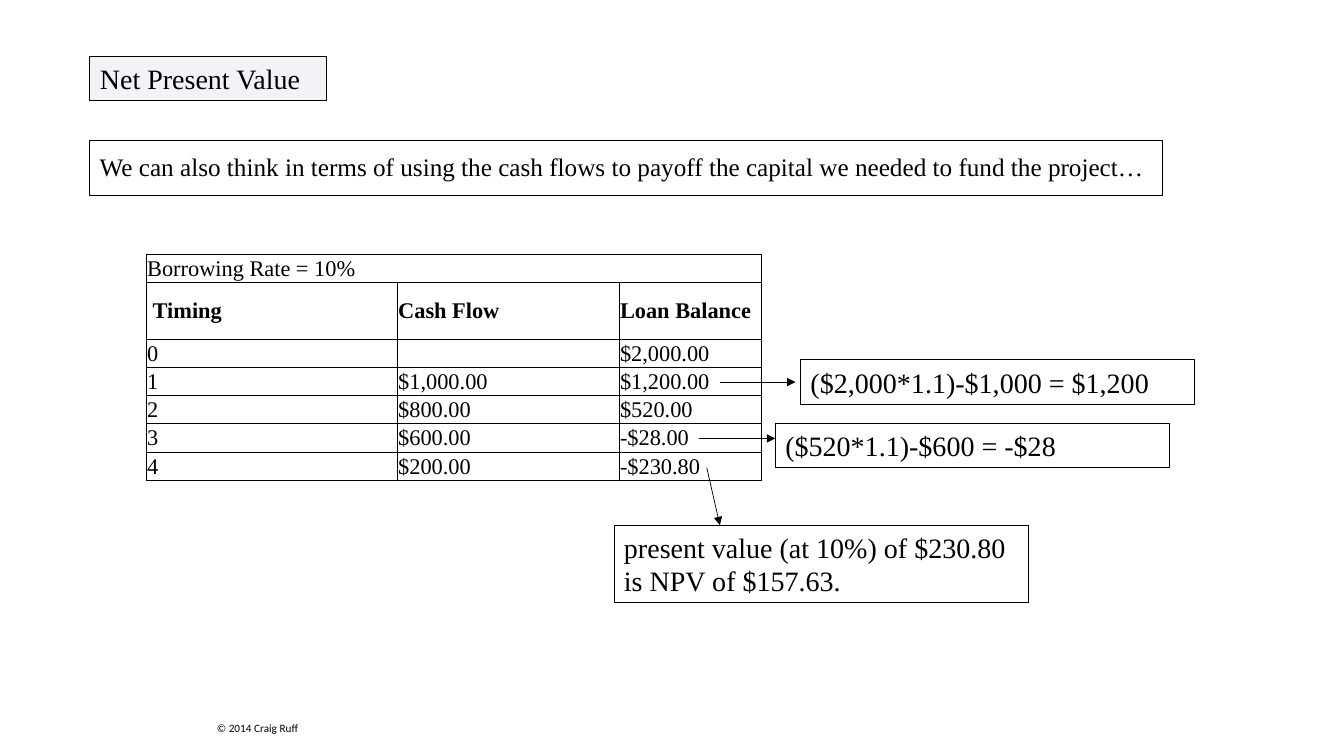
import pptx
import pptx.dml.color
import pptx.enum.shapes
import pptx.enum.text
import pptx.oxml
import pptx.oxml.ns
import pptx.util
from lxml import etree

Inches, Pt = pptx.util.Inches, pptx.util.Pt
ANCHOR, ALIGN = pptx.enum.text.MSO_ANCHOR, pptx.enum.text.PP_ALIGN
qn = pptx.oxml.ns.qn
SERIF = "Times New Roman"


def color(hex_code):
    return pptx.dml.color.RGBColor.from_string(hex_code)


def write(frame, words, size, font=SERIF, bold=False, align=ALIGN.LEFT):
    frame.text = words
    frame.word_wrap = True
    paragraph = frame.paragraphs[0]
    paragraph.alignment = align
    for run in paragraph.runs:
        run.font.size, run.font.name, run.font.bold = Pt(size), font, bold
        run.font.color.rgb = color("000000")


deck = pptx.Presentation()
deck.slide_width, deck.slide_height = Inches(13.33), Inches(7.5)
slide = deck.slides.add_slide(deck.slide_layouts[5])

# Title with a 5 % tint
title = slide.shapes.title
title.left, title.top, title.width, title.height = map(Inches, (0.89, 0.56, 2.35, 0.44))
write(title.text_frame, "Net Present Value", 20)
title.text_frame.auto_size = pptx.enum.text.MSO_AUTO_SIZE.NONE
title.text_frame.vertical_anchor = ANCHOR.MIDDLE
title.fill.solid()
title.fill.fore_color.rgb = color("002060")
tint = title.fill._xPr.find(qn("a:solidFill"))[0]
etree.SubElement(tint, qn("a:alpha"), val="5000")
title.line.color.rgb = color("000000")
title.line.width = Pt(0.75)

# Loan schedule
schedule = [
    ("Borrowing Rate = 10%", "", ""),
    ("\u00a0Timing", "Cash Flow", "Loan Balance"),
    ("0", "", "$2,000.00"),
    ("1", "$1,000.00", "$1,200.00"),
    ("2", "$800.00", "$520.00"),
    ("3", "$600.00", "-$28.00"),
    ("4", "$200.00", "-$230.80"),
]
column_widths = (2.49, 2.2, 1.41)
row_height = 0.28
loan = slide.shapes.add_table(len(schedule), 3, Inches(1.45), Inches(2.52),
                              Inches(sum(column_widths)), Inches(2.25)).table
loan.first_row = loan.horz_banding = False
for column, width in zip(loan.columns, column_widths):
    column.width = Inches(width)

for r, entries in enumerate(schedule):
    loan.rows[r].height = Inches(row_height * (2 if r == 1 else 1))
    for c, entry in enumerate(entries):
        cell = loan.cell(r, c)
        write(cell.text_frame, entry, 16, bold=r == 1)
        if not entry:
            etree.SubElement(cell.text_frame.paragraphs[0]._p, qn("a:endParaRPr"), sz="1600")
        cell.vertical_anchor = ANCHOR.MIDDLE
        cell.margin_left = cell.margin_right = cell.margin_top = Inches(0.01)
        cell.margin_bottom = 0
        # The rate row has no inner vertical borders
        open_sides = {"L": r == 0 and c > 0, "R": r == 0 and c < 2}
        for side in "LRTB":
            border = etree.SubElement(cell._tc.get_or_add_tcPr(), qn("a:ln" + side),
                                      w=str(Pt(0.5)))
            if open_sides.get(side):
                etree.SubElement(border, qn("a:noFill"))
            else:
                ink = etree.SubElement(border, qn("a:solidFill"))
                etree.SubElement(ink, qn("a:srgbClr"), val="000000")
        cell.fill.background()

# Framed statements: left, top, width, height, size, line spacing, words
statements = [
    (0.89, 1.39, 10.64, 0.55, 18, 0.9,
     "We can also think in terms of using the cash flows to payoff the capital "
     "we needed to fund the project…"),
    (7.94, 3.57, 3.91, 0.44, 20, 1.0, "($2,000*1.1)-$1,000 = $1,200"),
    (7.69, 4.2, 3.91, 0.44, 20, 1.0, "($520*1.1)-$600 = -$28"),
    (6.09, 5.21, 4.11, 0.77, 20, 1.0, "present value (at 10%) of $230.80 is NPV of $157.63."),
]
for left, top, width, height, size, spacing, words in statements:
    statement = slide.shapes.add_shape(pptx.enum.shapes.MSO_SHAPE.RECTANGLE,
                                       *map(Inches, (left, top, width, height)))
    statement.shadow.inherit = False
    statement.fill.background()
    statement.line.color.rgb = color("000000")
    statement.line.width = Pt(0.75)
    write(statement.text_frame, words, size)
    statement.text_frame.vertical_anchor = ANCHOR.MIDDLE
    statement.text_frame.paragraphs[0].line_spacing = spacing

# Arrows from loan balances to their explanations
for ends in [(7.14, 3.79, 7.89, 3.79), (6.93, 4.35, 7.69, 4.35), (7.01, 4.64, 7.14, 5.21)]:
    arrow = slide.shapes.add_connector(pptx.enum.shapes.MSO_CONNECTOR.STRAIGHT,
                                       *map(Inches, ends))
    arrow.line.color.rgb = color("000000")
    arrow.line.width = Pt(0.5)
    etree.SubElement(arrow.line._get_or_add_ln(), qn("a:tailEnd"), type="triangle")
    etree.SubElement(arrow._element.spPr, qn("a:effectLst"))

copyright_line = slide.shapes.add_textbox(*map(Inches, (1.95, 7.11, 1.21, 0.24)))
write(copyright_line.text_frame, "© 2014 Craig Ruff", 8, font="Calibri", align=ALIGN.CENTER)

deck.save("out.pptx")
